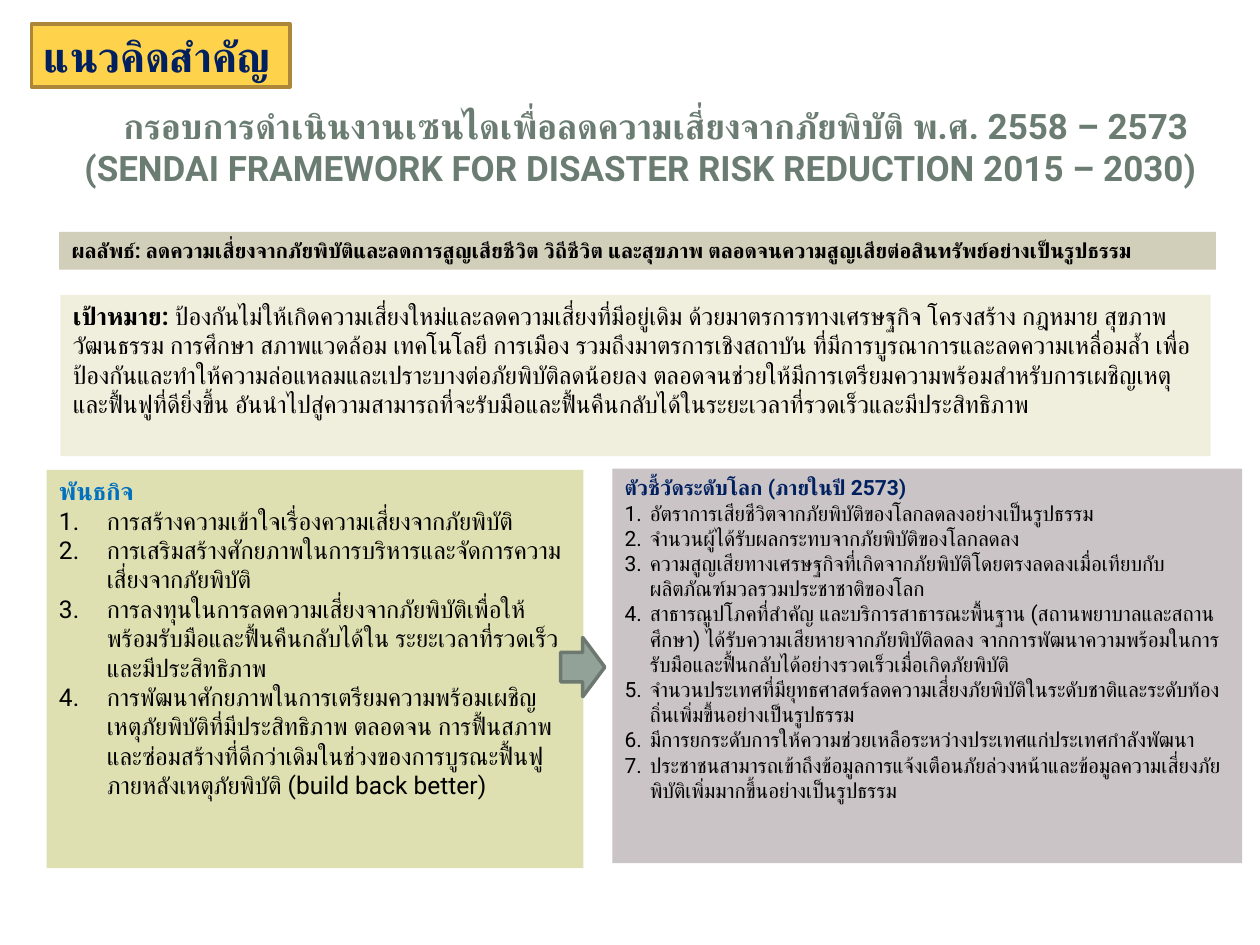
from lxml import etree
from pptx import Presentation
from pptx.dml.color import RGBColor
from pptx.enum.shapes import MSO_SHAPE
from pptx.enum.text import MSO_ANCHOR, MSO_AUTO_SIZE, PP_ALIGN
from pptx.oxml.ns import qn
from pptx.util import Inches, Pt

RECTANGLE = MSO_SHAPE.RECTANGLE
RIGHT_ARROW = MSO_SHAPE.RIGHT_ARROW
TOP, MIDDLE = MSO_ANCHOR.TOP, MSO_ANCHOR.MIDDLE
LEFT, RIGHT = PP_ALIGN.LEFT, PP_ALIGN.RIGHT
FIXED_SIZE = MSO_AUTO_SIZE.NONE
TITLE_ONLY = 5
FONT = "Roboto"

COLORS = {
    "black": "000000",
    "navy": "002060",
    "blue": "0070C0",
    "title": "6B7D72",
    "outcome": "D1CEB9",
    "goal": "F0EFDD",
    "missions": "DFE0B1",
    "indicators": "CAC4C6",
    "arrow": "93A299",
    "arrow_line": "6D7871",
    "label": "FFC000",
    "label_line": "AC8639",
}

TITLE = (
    "กรอบการดำเนินงานเซนไดเพื่อลดความเสี่ยงจากภัยพิบัติ พ.ศ. 2558 – 2573 \v"
    "(SENDAI FRAMEWORK FOR DISASTER RISK REDUCTION 2015 – 2030)"
)
OUTCOME = (
    "ผลลัพธ์: ลดความเสี่ยงจากภัยพิบัติและลดการสูญเสียชีวิต วิถีชีวิต และสุขภาพ "
    "ตลอดจนความสูญเสียต่อสินทรัพย์อย่างเป็นรูปธรรม"
)
GOAL = (
    "ป้องกันไม่ให้เกิดความเสี่ยงใหม่และลดความเสี่ยงที่มีอยู่เดิม ด้วยมาตรการทางเศรษฐกิจ "
    "โครงสร้าง กฎหมาย สุขภาพ วัฒนธรรม การศึกษา สภาพแวดล้อม เทคโนโลยี การเมือง "
    "รวมถึงมาตรการเชิงสถาบัน ที่มีการบูรณาการและลดความเหลื่อมล้ำ "
    "เพื่อป้องกันและทำให้ความล่อแหลมและเปราะบางต่อภัยพิบัติลดน้อยลง "
    "ตลอดจนช่วยให้มีการเตรียมความพร้อมสำหรับการเผชิญเหตุและฟื้นฟูที่ดียิ่งขึ้น "
    "อันนำไปสู่ความสามารถที่จะรับมือและฟื้นคืนกลับได้ในระยะเวลาที่รวดเร็วและมีประสิทธิภาพ"
)
MISSIONS = [
    "การสร้างความเข้าใจเรื่องความเสี่ยงจากภัยพิบัติ",
    "การเสริมสร้างศักยภาพในการบริหารและจัดการความเสี่ยงจากภัยพิบัติ",
    "การลงทุนในการลดความเสี่ยงจากภัยพิบัติเพื่อให้พร้อมรับมือและฟื้นคืนกลับได้ใน "
    "ระยะเวลาที่รวดเร็วและมีประสิทธิภาพ",
    "การพัฒนาศักยภาพในการเตรียมความพร้อมเผชิญเหตุภัยพิบัติที่มีประสิทธิภาพ ตลอดจน "
    "การฟื้นสภาพและซ่อมสร้างที่ดีกว่าเดิมในช่วงของการบูรณะฟื้นฟูภายหลังเหตุภัยพิบัติ "
    "(build back better)",
]
INDICATORS = [
    "อัตราการเสียชีวิตจากภัยพิบัติของโลกลดลงอย่างเป็นรูปธรรม",
    "จำนวนผู้ได้รับผลกระทบจากภัยพิบัติของโลกลดลง",
    "ความสูญเสียทางเศรษฐกิจที่เกิดจากภัยพิบัติโดยตรงลดลงเมื่อเทียบกับ"
    "ผลิตภัณฑ์มวลรวมประชาชาติของโลก",
    "สาธารณูปโภคที่สำคัญ และบริการสาธารณะพื้นฐาน (สถานพยาบาลและสถานศึกษา) "
    "ได้รับความเสียหายจากภัยพิบัติลดลง "
    "จากการพัฒนาความพร้อมในการรับมือและฟื้นกลับได้อย่างรวดเร็วเมื่อเกิดภัยพิบัติ",
    "จำนวนประเทศที่มียุทธศาสตร์ลดความเสี่ยงภัยพิบัติในระดับชาติและระดับท้องถิ่น"
    "เพิ่มขึ้นอย่างเป็นรูปธรรม",
    "มีการยกระดับการให้ความช่วยเหลือระหว่างประเทศแก่ประเทศกำลังพัฒนา",
    "ประชาชนสามารถเข้าถึงข้อมูลการแจ้งเตือนภัยล่วงหน้าและข้อมูลความเสี่ยงภัยพิบัติ"
    "เพิ่มมากขึ้นอย่างเป็นรูปธรรม",
]


def rgb(name):
    return RGBColor.from_string(COLORS[name])


def set_all(target, values):
    for name, value in values.items():
        setattr(target, name, value)


def format_span(span, size, color="black", bold=False):
    set_all(span.font, {"name": FONT, "size": Pt(size), "bold": bold})
    span.font.color.rgb = rgb(color)
    complex_font = etree.SubElement(span.font._element, qn("a:cs"))
    complex_font.set("typeface", FONT)


def add_span(para, text, size, color="black", bold=False):
    span = para.add_run()
    span.text = text
    format_span(span, size, color, bold)


def number_para(para, indent):
    props = para._p.get_or_add_pPr()
    props.set("marL", str(Inches(indent)))
    props.set("indent", str(-Inches(indent)))
    etree.SubElement(props, qn("a:buFont")).set("typeface", "Arial")
    etree.SubElement(props, qn("a:buAutoNum")).set("type", "arabicPeriod")


def add_panel(page, box, fill, line=None, preset=RECTANGLE, wrap=True):
    panel = page.shapes.add_shape(preset, *map(Inches, box))
    panel.shadow.inherit = False
    panel.fill.solid()
    panel.fill.fore_color.rgb = rgb(fill)
    if line:
        panel.line.color.rgb = rgb(line)
        panel.line.width = Pt(2)
    else:
        panel.line.fill.background()
    set_all(panel.text_frame, {"word_wrap": wrap, "vertical_anchor": TOP})
    panel.text_frame.paragraphs[0].alignment = LEFT
    return panel


def add_title(page, box):
    title = page.shapes.title
    set_all(title, dict(zip(("left", "top", "width", "height"), map(Inches, box))))
    frame = title.text_frame
    frame.text = TITLE
    set_all(frame, {"vertical_anchor": MIDDLE, "word_wrap": True,
                    "auto_size": FIXED_SIZE})
    para = frame.paragraphs[0]
    para.alignment = RIGHT
    for span in para.runs:
        format_span(span, 20, "title", True)


def add_outcome(page, box):
    panel = add_panel(page, box, "outcome")
    add_span(panel.text_frame.paragraphs[0], OUTCOME, 12, bold=True)


def add_goal(page, box):
    para = add_panel(page, box, "goal").text_frame.paragraphs[0]
    add_span(para, "เป้าหมาย: ", 14, bold=True)
    add_span(para, GOAL, 14)


def add_numbered_panel(page, box, fill, heading, color, items, size, indent):
    frame = add_panel(page, box, fill).text_frame
    add_span(frame.paragraphs[0], heading, size, color, True)
    for item in items:
        para = frame.add_paragraph()
        para.alignment = LEFT
        number_para(para, indent)
        add_span(para, item, size)


def add_label(page, box):
    label = add_panel(page, box, "label", "label_line", wrap=False)
    color = label.fill._xPr.find(qn("a:solidFill"))[0]
    etree.SubElement(color, qn("a:alpha")).set("val", "70000")
    add_span(label.text_frame.paragraphs[0], "แนวคิดสำคัญ", 24, "navy", True)


def main():
    deck = Presentation()
    deck.slide_width, deck.slide_height = Inches(10), Inches(7.5)
    page = deck.slides.add_slide(deck.slide_layouts[TITLE_ONLY])
    add_title(page, (0.57, 0.59, 9.03, 1.14))
    add_outcome(page, (0.47, 1.84, 9.18, 0.3))
    add_numbered_panel(page, (0.37, 3.73, 4.26, 3.16), "missions",
                       "พันธกิจ", "blue", MISSIONS, 14, 0.38)
    add_goal(page, (0.48, 2.34, 9.13, 1.28))
    add_numbered_panel(page, (4.86, 3.72, 5, 3.13), "indicators",
                       "ตัวชี้วัดระดับโลก (ภายในปี 2573)", "navy", INDICATORS, 12, 0.2)
    add_panel(page, (4.45, 5.06, 0.35, 0.47), "arrow", "arrow_line", RIGHT_ARROW)
    add_label(page, (0.25, 0.19, 2.05, 0.5))
    deck.save("out.pptx")


if __name__ == "__main__":
    main()
